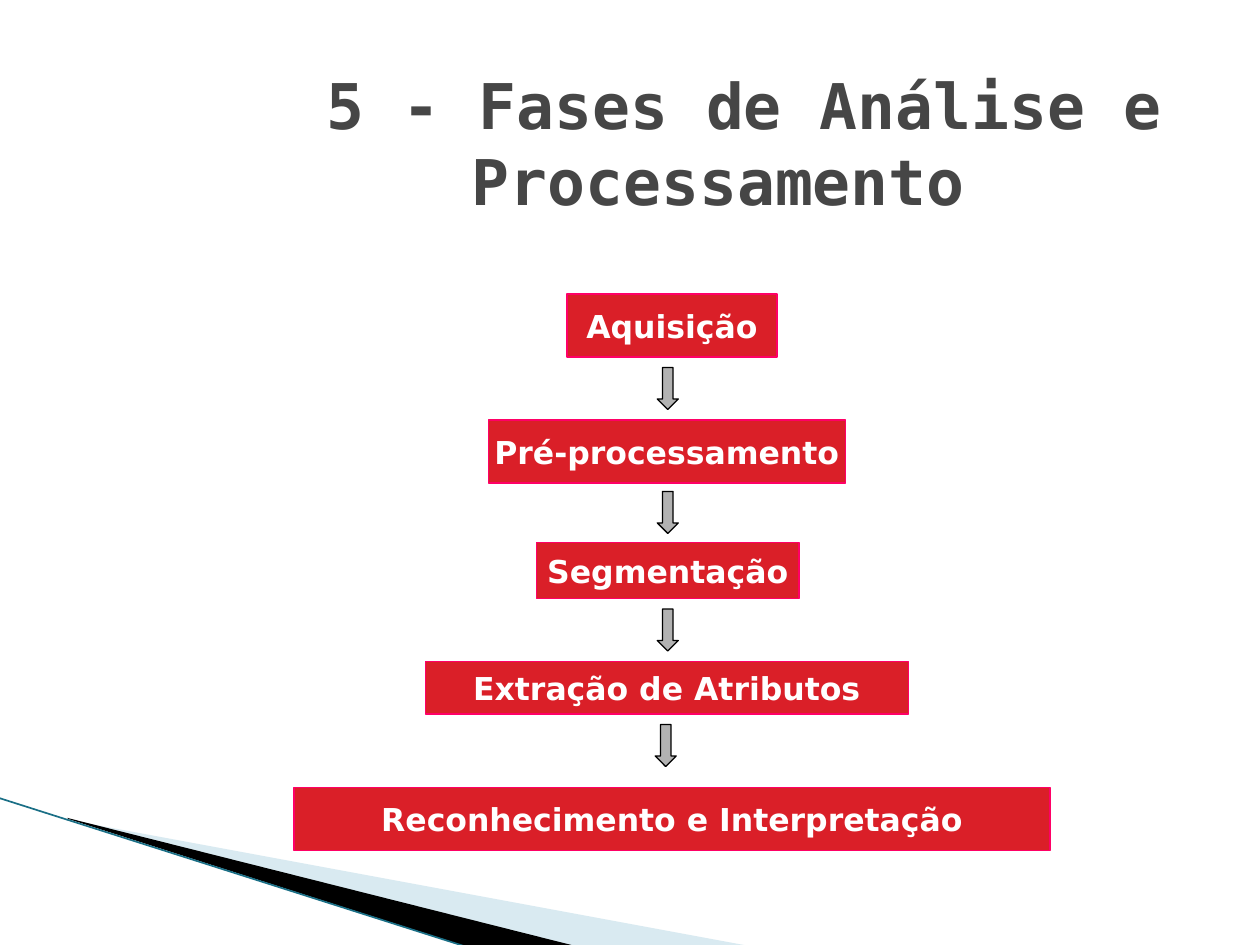
from dataclasses import dataclass

from lxml.etree import SubElement
from pptx import Presentation
from pptx.dml.color import RGBColor
from pptx.enum.shapes import MSO_CONNECTOR as Connector
from pptx.enum.shapes import MSO_SHAPE as Preset
from pptx.enum.text import MSO_ANCHOR as Anchor
from pptx.enum.text import PP_ALIGN as Align
from pptx.oxml.ns import qn
from pptx.util import Inches, Pt

COLUMNS, ROWS = 120, 90
WIDTH, HEIGHT = Inches(10), Inches(7.5)
COLORS = {
    "phase": "DA1F28",
    "phase_edge": "FF0066",
    "arrow": "B2B2B2",
    "black": "000000",
    "white": "FFFFFF",
    "title": "464646",
    "pale_wedge": "A0CBDC",
    "edge_line": "1A6F86",
}


@dataclass(frozen=True)
class Area:
    column: float
    row: float
    columns: float
    rows: float


@dataclass(frozen=True)
class Phase:
    text: str
    area: Area


@dataclass(frozen=True)
class Wedge:
    color: str
    points: tuple
    opacity: int = 100


PHASES = (
    Phase("Aquisição", Area(54, 28, 20, 6)),
    Phase("Pré-processamento", Area(46.5, 40, 34, 6)),
    Phase("Segmentação", Area(51.1, 51.7, 25, 5.3)),
    Phase("Extração de Atributos", Area(40.5, 63, 46, 5)),
    Phase("Reconhecimento e Interpretação", Area(28, 75, 72, 6)),
)
ARROWS = tuple(
    Area(column, row, 2, 4)
    for column, row in ((62.6, 35), (62.6, 46.8), (62.6, 58), (62.4, 69))
)
WEDGES = (
    Wedge("pale_wedge", ((6.6, 78.1), (71.4, 90.1), (54.7, 90.1), (6.6, 78)), 40),
    Wedge("black", ((6.4, 77.9), (54.8, 90.1), (44.6, 90.2), (6.5, 78))),
)
EDGE = ((-0.1, 76), (44.5, 90.2))


def across(columns: float) -> int:
    return round(WIDTH * columns / COLUMNS)


def down(rows: float) -> int:
    return round(HEIGHT * rows / ROWS)


def frame(area: Area) -> tuple:
    return across(area.column), down(area.row), across(area.columns), down(area.rows)


def color(name: str) -> RGBColor:
    return RGBColor.from_string(COLORS[name])


def paint(shape, fill: str, line: str = "") -> None:
    shape.shadow.inherit = False
    shape.fill.solid()
    shape.fill.fore_color.rgb = color(fill)
    if line:
        shape.line.color.rgb = color(line)
        shape.line.width = Pt(0.75)
    else:
        shape.line.fill.background()


def add_text(para, text: str, *, size: float, font: str, ink: str) -> None:
    para.alignment = Align.CENTER
    span = para.add_run()
    span.text = text
    span.font.size = Pt(size)
    span.font.name = font
    span.font.bold = True
    span.font.color.rgb = color(ink)


def add_wedge(page, wedge: Wedge) -> None:
    points = [(across(column), down(row)) for column, row in wedge.points]
    builder = page.shapes.build_freeform(*points[0], scale=1.0)
    builder.add_line_segments(points[1:], close=True)
    shape = builder.convert_to_shape()
    paint(shape, wedge.color)
    if wedge.opacity < 100:
        tint = shape.fill._xPr.find(".//" + qn("a:srgbClr"))
        SubElement(tint, qn("a:alpha"), val=str(wedge.opacity * 1000))


def add_edge(page) -> None:
    ends = [length for column, row in EDGE for length in (across(column), down(row))]
    line = page.shapes.add_connector(Connector.STRAIGHT, *ends)
    line.line.color.rgb = color("edge_line")
    line.line.width = Pt(0.95)
    SubElement(line._element.spPr, qn("a:effectLst"))


def add_phase(page, phase: Phase) -> None:
    box = page.shapes.add_shape(Preset.RECTANGLE, *frame(phase.area))
    paint(box, "phase", "phase_edge")
    box.text_frame.word_wrap = False
    box.text_frame.vertical_anchor = Anchor.MIDDLE
    add_text(box.text_frame.paragraphs[0], phase.text,
             size=18, font="DejaVu Sans", ink="white")


def add_arrow(page, area: Area) -> None:
    arrow = page.shapes.add_shape(Preset.DOWN_ARROW, *frame(area))
    paint(arrow, "arrow", "black")


def set_title(page) -> None:
    title = page.shapes.title
    title.left, title.top, title.width, title.height = frame(Area(18, 6, 102, 15))
    title.text_frame.word_wrap = True
    title.text_frame.vertical_anchor = Anchor.MIDDLE
    para = title.text_frame.paragraphs[0]
    for text, size, font in (
        (" ", 36.9, "DejaVu Sans Mono"),
        ("5 - Fases de Análise e Processamento", 36, "DejaVu Sans Mono"),
        (" ", 28.8, "Roboto"),
    ):
        add_text(para, text, size=size, font=font, ink="title")


def main() -> None:
    deck = Presentation()
    deck.slide_width, deck.slide_height = WIDTH, HEIGHT
    page = deck.slides.add_slide(deck.slide_layouts.get_by_name("Title Only"))
    set_title(page)
    for wedge in WEDGES:
        add_wedge(page, wedge)
    add_edge(page)
    for phase in PHASES:
        add_phase(page, phase)
    for area in ARROWS:
        add_arrow(page, area)
    deck.save("out.pptx")


if __name__ == "__main__":
    main()
